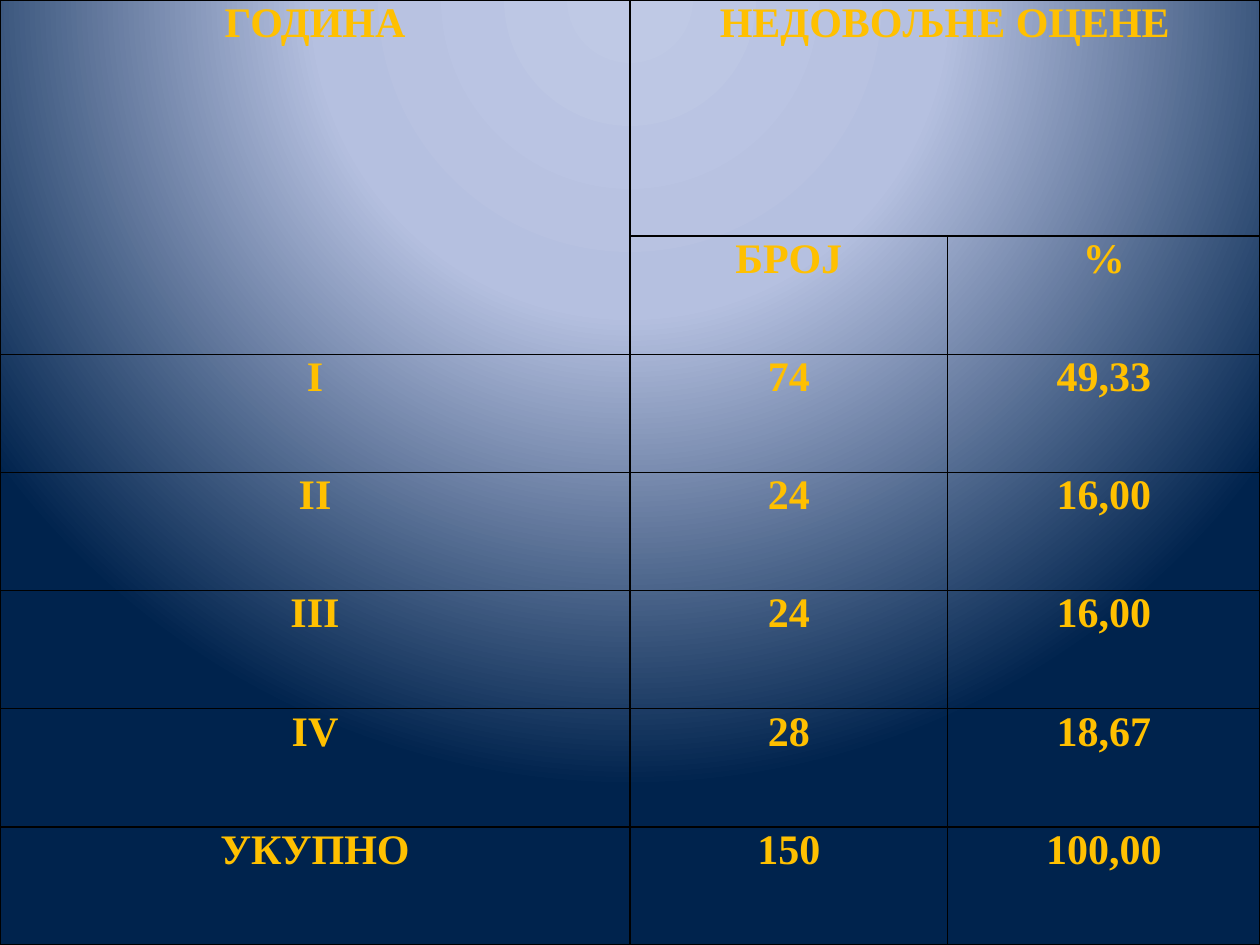
from pptx import Presentation
from pptx.dml.color import RGBColor
from pptx.enum.text import PP_ALIGN
from pptx.oxml import parse_xml
from pptx.oxml.ns import nsdecls
from pptx.util import Pt

CENTER = PP_ALIGN.CENTER

ROWS = [
    ("ГОДИНА", "НЕДОВОЉНЕ ОЦЕНЕ", ""),
    ("", "БРОЈ", "%"),
    ("I", "74", "49,33"),
    ("II", "24", "16,00"),
    ("III", "24", "16,00"),
    ("IV", "28", "18,67"),
    ("УКУПНО", "150", "100,00"),
]
MERGES = [((0, 0), (1, 0)), ((0, 1), (0, 2))]
COLORS = {"text": "FFC000", "border": "000000"}
GRADIENT = [(0, "BFC9E5"), (40, "B5C0E0"), (100, "00234D")]
FONT = "Times New Roman"

WIDTH, HEIGHT = 720, 540
COLUMN_WIDTHS = [360, 181.5, 178.5]
ROW_HEIGHT = HEIGHT / (len(ROWS) + 1)
ROW_HEIGHTS = [2 * ROW_HEIGHT] + [ROW_HEIGHT] * (len(ROWS) - 1)


def set_background(slide):
    stops = "".join(
        f'<a:gs pos="{position * 1000}"><a:srgbClr val="{color}"/></a:gs>'
        for position, color in GRADIENT
    )
    slide.element.cSld.insert(0, parse_xml(
        f'<p:bg {nsdecls("p", "a")}><p:bgPr><a:gradFill rotWithShape="1">'
        f'<a:gsLst>{stops}</a:gsLst><a:path path="circle">'
        '<a:fillToRect l="50000" t="-80000" r="50000" b="180000"/></a:path>'
        '</a:gradFill><a:effectLst/></p:bgPr></p:bg>'
    ))


def set_borders(cell):
    properties = cell._tc.get_or_add_tcPr()
    for side in "LRTB":
        properties.append(parse_xml(
            f'<a:ln{side} {nsdecls("a")} w="{Pt(1)}"><a:solidFill>'
            f'<a:srgbClr val="{COLORS["border"]}"/></a:solidFill></a:ln{side}>'
        ))


def format_cell(cell, text):
    set_borders(cell)
    cell.fill.background()
    cell.margin_left = cell.margin_right = Pt(5)
    cell.margin_top = cell.margin_bottom = 0
    cell.text = text
    paragraph = cell.text_frame.paragraphs[0]
    paragraph.alignment = CENTER
    paragraph.font.name = FONT
    paragraph.font.size = Pt(24)
    paragraph.font.bold = True
    paragraph.font.color.rgb = RGBColor.from_string(COLORS["text"])


def add_grades_table(slide):
    table = slide.shapes.add_table(
        len(ROWS), len(COLUMN_WIDTHS), 0, 0, Pt(WIDTH), Pt(HEIGHT)
    ).table
    table.first_row = table.horz_banding = False
    for column, width in zip(table.columns, COLUMN_WIDTHS):
        column.width = Pt(width)
    for row, height, texts in zip(table.rows, ROW_HEIGHTS, ROWS):
        row.height = Pt(height)
        for cell, text in zip(row.cells, texts):
            format_cell(cell, text)
    for first, last in MERGES:
        table.cell(*first).merge(table.cell(*last))


def main():
    presentation = Presentation()
    presentation.slide_width, presentation.slide_height = Pt(WIDTH), Pt(HEIGHT)
    slide = presentation.slides.add_slide(presentation.slide_layouts[6])
    set_background(slide)
    add_grades_table(slide)
    presentation.save("out.pptx")


if __name__ == "__main__":
    main()
